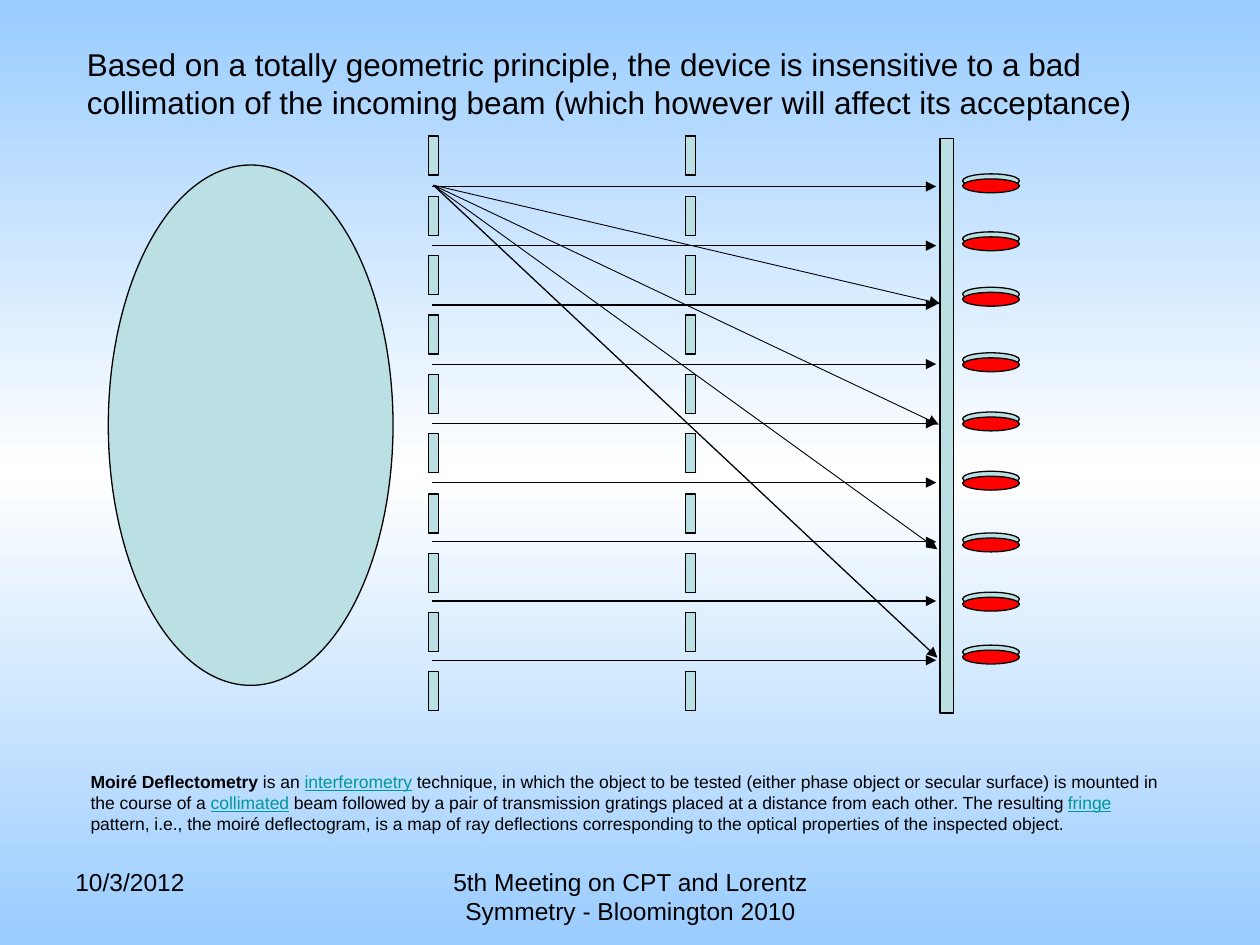
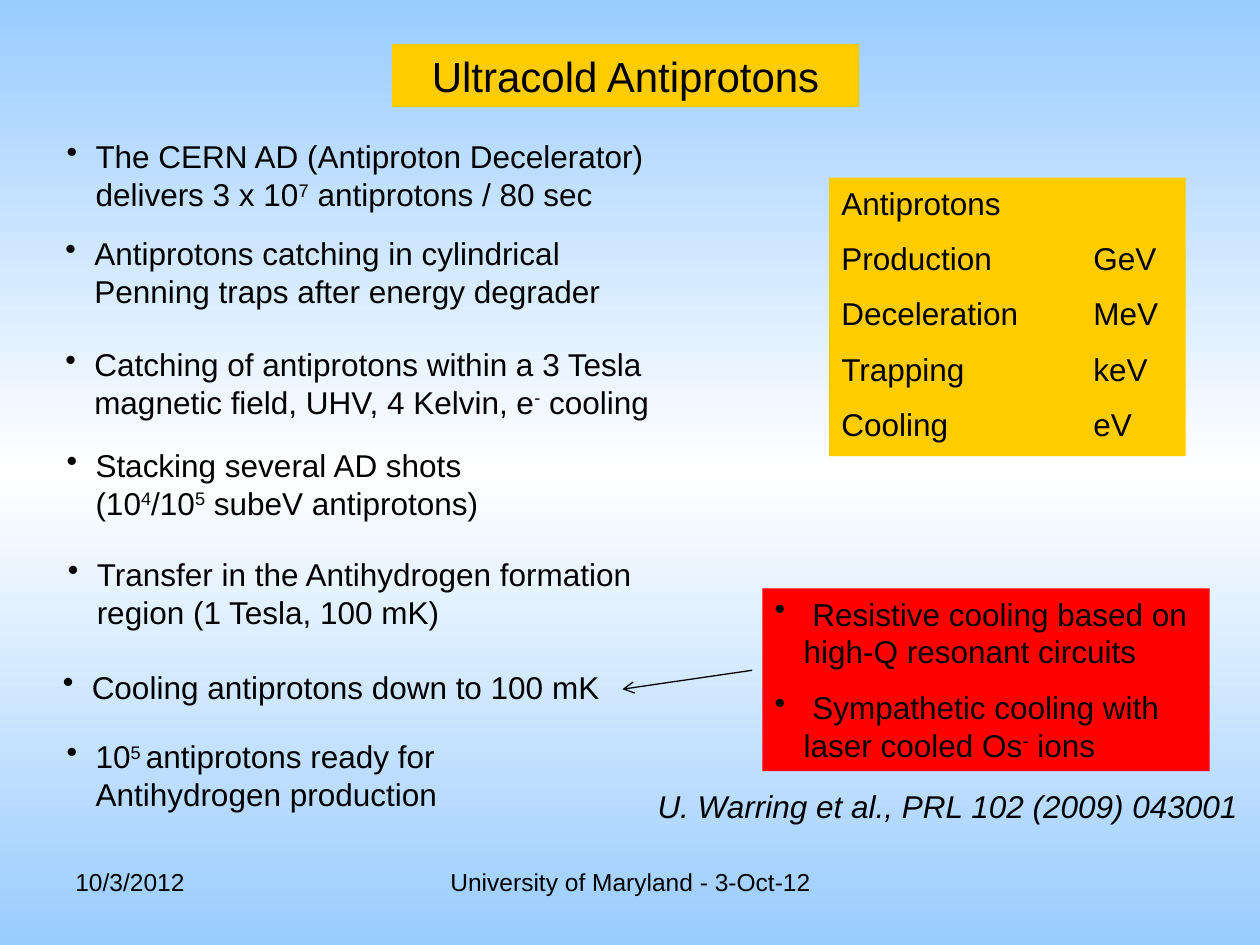
"""Builds two slides on moiré deflectometry and ultracold antiprotons."""
from copy import deepcopy

from lxml.etree import SubElement
from pptx import Presentation
from pptx.dml.color import RGBColor
from pptx.enum.shapes import MSO_CONNECTOR, MSO_SHAPE
from pptx.enum.text import MSO_ANCHOR, MSO_AUTO_SIZE, PP_ALIGN
from pptx.oxml.ns import qn
from pptx.util import Pt

SCALE = 9144
BLACK = RGBColor(0x00, 0x00, 0x00)
WHITE = RGBColor(0xFF, 0xFF, 0xFF)
SKY = RGBColor(0x99, 0xCC, 0xFF)
PALE_TEAL = RGBColor(0xBB, 0xE0, 0xE3)
LINK_TEAL = RGBColor(0x00, 0x99, 0x99)
GOLD = RGBColor(0xFF, 0xCC, 0x00)
RED = RGBColor(0xFF, 0x00, 0x00)
FONT = "Arial"
BODY_SIZE = 18
HANGING = 23
UNIT_TAB = 200


def px(*lengths):
    return [round(length * SCALE) for length in lengths]


class Deck:
    def __init__(self):
        self.prs = Presentation()
        self.prs.slide_width, self.prs.slide_height = px(1000, 750)
        self.slide = None
        self.paint_background()

    def paint_background(self):
        master = self.prs.slide_master
        fill = master.background.fill
        fill.gradient()
        fill.gradient_angle = 90
        stops = master.element.find(".//" + qn("a:gsLst"))
        stops.insert(1, deepcopy(stops[0]))
        stops[1].set("pos", "50000")
        for stop, color in zip(fill.gradient_stops, (SKY, WHITE, SKY)):
            stop.color.rgb = color

    def new_slide(self, title, at, size, align, footer, fill=None):
        self.slide = self.prs.slides.add_slide(self.prs.slide_layouts[5])
        heading = self.slide.shapes.title
        heading.left, heading.top, heading.width, heading.height = px(*at)
        if fill is not None:
            heading.fill.solid()
            heading.fill.fore_color.rgb = fill
        self.fill_text(heading, [[title]], size, align)
        self.text((50, 683, 233, 52), [["10/3/2012"]], 14)
        self.text((342, 683, 317, 52), [[footer]], 14, PP_ALIGN.CENTER)

    def fill_text(self, shape, paragraphs, size=BODY_SIZE, align=PP_ALIGN.LEFT,
                  anchor=MSO_ANCHOR.TOP, bullet=False, tab=None, italic=None):
        frame = shape.text_frame
        frame.word_wrap = True
        frame.auto_size = MSO_AUTO_SIZE.NONE
        frame.vertical_anchor = anchor
        for number, runs in enumerate(paragraphs):
            paragraph = frame.add_paragraph() if number else frame.paragraphs[0]
            props = paragraph._p.get_or_add_pPr()
            if bullet:
                props.set("marL", str(HANGING * SCALE))
                props.set("indent", str(-HANGING * SCALE))
                SubElement(props, qn("a:buChar"), char="•")
            if tab:
                stops = SubElement(props, qn("a:tabLst"))
                SubElement(stops, qn("a:tab"), pos=str(tab * SCALE), algn="l")
            paragraph.alignment = align
            if number:
                paragraph.space_before = Pt(10)
            font = paragraph.font
            font.name, font.size, font.italic = FONT, Pt(size), italic
            font.color.rgb = BLACK
            for part in runs:
                self.add_run(paragraph, *([part] if isinstance(part, str) else part))

    def add_run(self, paragraph, text, role=None):
        run = paragraph.add_run()
        run.text = text
        if role == "bold":
            run.font.bold = True
        elif role == "link":
            run.font.underline = True
            run.font.color.rgb = LINK_TEAL
        elif role == "super":
            run._r.get_or_add_rPr().set("baseline", "30000")

    def text(self, at, paragraphs, *args, **style):
        self.fill_text(self.slide.shapes.add_textbox(*px(*at)), paragraphs, *args, **style)

    def shape(self, kind, at, fill, outlined=True):
        shape = self.slide.shapes.add_shape(kind, *px(*at))
        shape.shadow.inherit = False
        shape.fill.solid()
        shape.fill.fore_color.rgb = fill
        if outlined:
            shape.line.color.rgb = BLACK
            shape.line.width = Pt(0.75)
        else:
            shape.line.fill.background()
        return shape

    def panel(self, at, fill, paragraphs, **style):
        panel = self.shape(MSO_SHAPE.RECTANGLE, at, fill, outlined=False)
        self.fill_text(panel, paragraphs, **style)

    def arrow(self, start, end, weight, tip="triangle"):
        arrow = self.slide.shapes.add_connector(
            MSO_CONNECTOR.STRAIGHT, *px(*start, *end))
        arrow.line.color.rgb = BLACK
        arrow.line.width = Pt(weight)
        props = arrow._element.spPr
        SubElement(props.find(qn("a:ln")), qn("a:tailEnd"), type=tip)
        SubElement(props, qn("a:effectLst"))


def deflectometer_slide(deck):
    deck.new_slide(
        "Based on a totally geometric principle, the device is insensitive to a bad "
        "collimation of the incoming beam (which however will affect its acceptance)",
        (59, 31, 890, 70), BODY_SIZE, PP_ALIGN.LEFT,
        "5th Meeting on CPT and Lorentz Symmetry - Bloomington 2010")

    deck.shape(MSO_SHAPE.OVAL, (86, 131, 226, 413), PALE_TEAL)
    for grating_left in (340, 544):
        for bar in range(10):
            deck.shape(MSO_SHAPE.RECTANGLE,
                       (grating_left, round(108.5 + 47.2 * bar), 8, 31), PALE_TEAL)
    deck.shape(MSO_SHAPE.RECTANGLE, (746, 110, 11, 456), PALE_TEAL)

    for slit in range(9):
        ray_y = 148 + 47 * slit
        deck.arrow((343, ray_y), (743, ray_y), 0.75 if slit in (0, 2, 7) else 0.5)
    for hit, weight in (((746, 241), 0.5), ((745, 337), 0.5),
                        ((744, 436), 0.5), ((744, 522), 0.75)):
        deck.arrow((344, 147), hit, weight)

    for spot_top in (138, 184, 228, 280, 327, 374, 423, 470, 512):
        for drop, color in ((0, PALE_TEAL), (4, RED)):
            deck.shape(MSO_SHAPE.OVAL, (764, spot_top + drop, 45, 11), color)

    deck.text((62, 607, 879, 60), [[
        ("Moiré Deflectometry", "bold"), " is an ", ("interferometry", "link"),
        " technique, in which the object to be tested (either phase object or secular "
        "surface) is mounted in the course of a ", ("collimated", "link"),
        " beam followed by a pair of transmission gratings placed at a distance from "
        "each other. The resulting ", ("fringe", "link"),
        " pattern, i.e., the moiré deflectogram, is a map of ray deflections "
        "corresponding to the optical properties of the inspected object.",
    ]], 10, anchor=MSO_ANCHOR.MIDDLE)


def antiprotons_slide(deck):
    deck.new_slide("Ultracold Antiprotons", (311, 35, 371, 50), 24, PP_ALIGN.CENTER,
                   "University of Maryland - 3-Oct-12", GOLD)

    steps = (
        ((43, 104, 485, 70), ["The CERN AD (Antiproton Decelerator) delivers 3 x 10",
                              ("7", "super"), " antiprotons / 80 sec"]),
        ((42, 181, 451, 70), ["Antiprotons catching in cylindrical Penning traps "
                              "after energy degrader"]),
        ((42, 269, 552, 70), ["Catching of antiprotons within a 3 Tesla magnetic "
                              "field, UHV, 4 Kelvin, e", ("-", "super"), " cooling"]),
        ((43, 349, 379, 70), ["Stacking several AD shots (10", ("4", "super"), "/10",
                              ("5", "super"), " subeV antiprotons)"]),
        ((44, 436, 520, 70), ["Transfer in the Antihydrogen formation region "
                              "(1 Tesla, 100 mK)"]),
        ((40, 525, 891, 40), ["Cooling antiprotons down to 100 mK"]),
        ((43, 580, 442, 70), ["10", ("5 ", "super"),
                              "antiprotons ready for Antihydrogen production"]),
    )
    for at, step in steps:
        deck.text(at, [step], bullet=True)

    energies = ("Antiprotons", "Production\tGeV", "Deceleration\tMeV",
                "Trapping\tkeV", "Cooling\teV")
    deck.panel((658, 141, 283, 221), GOLD, [[row] for row in energies], tab=UNIT_TAB)
    deck.panel((605, 467, 355, 145), RED, [
        [" Resistive cooling based on high-Q resonant circuits"],
        [" Sympathetic cooling with laser cooled Os", ("-", "super"), " ions"],
    ], bullet=True)
    deck.arrow((597, 532), (494, 547), 0.75, "arrow")
    deck.text((512, 620, 488, 40), [["U. Warring et al., PRL 102 (2009) 043001"]],
              italic=True)


def main():
    deck = Deck()
    deflectometer_slide(deck)
    antiprotons_slide(deck)
    deck.prs.save("out.pptx")


if __name__ == "__main__":
    main()
